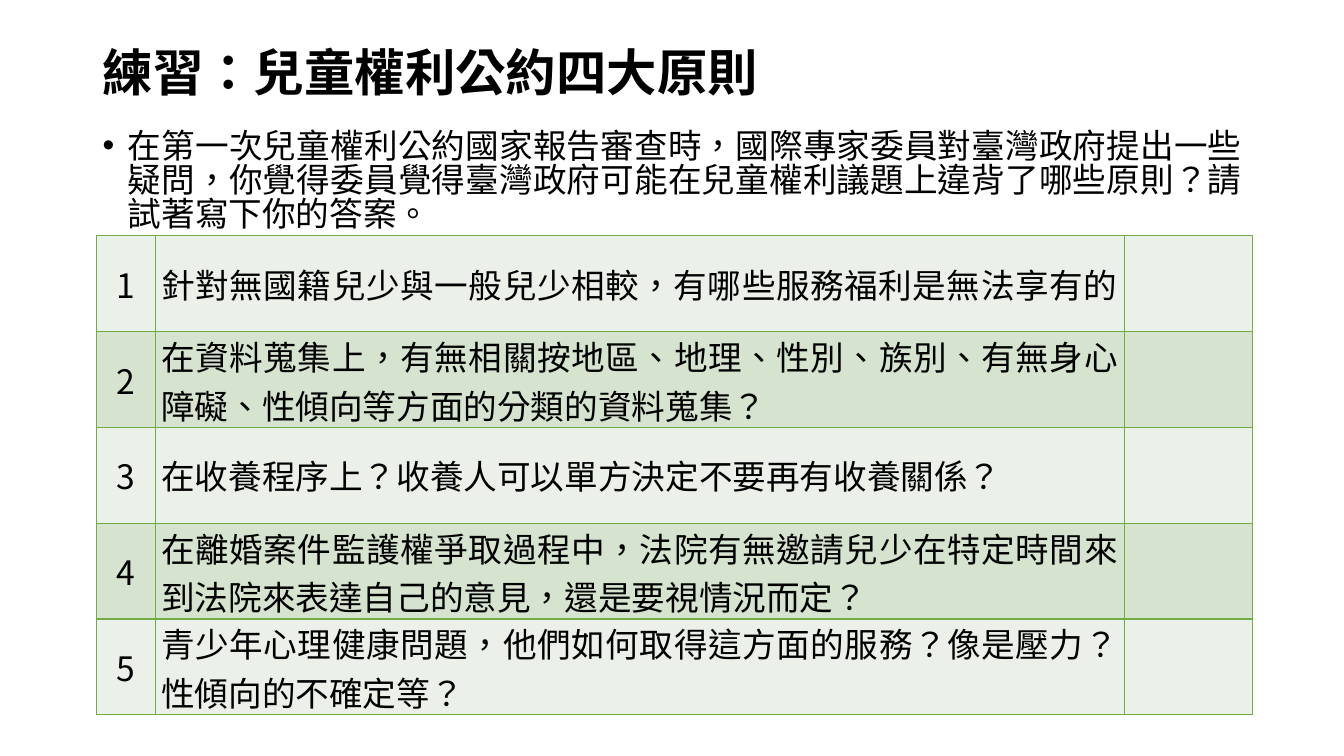
from lxml import etree
from pptx import Presentation
from pptx.dml.color import RGBColor
from pptx.enum import text
from pptx.oxml import ns
from pptx.util import Inches, Pt

FONT = "Noto Sans CJK SC"
COLORS = {"text": "000000", "border": "70AD47", "light": "EBF1E9", "dark": "D5E3CF"}
TITLE = "練習：兒童權利公約四大原則"
INTRODUCTION = (
    "在第一次兒童權利公約國家報告審查時，國際專家委員對臺灣政府提出一些疑問，"
    "你覺得委員覺得臺灣政府可能在兒童權利議題上違背了哪些原則？請試著寫下你的答案。"
)
QUESTIONS = [
    "針對無國籍兒少與一般兒少相較，有哪些服務福利是無法享有的？",
    "在資料蒐集上，有無相關按地區、地理、性別、族別、有無身心障礙、性傾向等方面的分類的資料蒐集？",
    "在收養程序上？收養人可以單方決定不要再有收養關係？",
    "在離婚案件監護權爭取過程中，法院有無邀請兒少在特定時間來到法院來表達自己的意見，還是要視情況而定？",
    "青少年心理健康問題，他們如何取得這方面的服務？像是壓力？性傾向的不確定等？",
]
COLUMN_WIDTHS = [0.58, 9.61, 1.27]
ROW_HEIGHT = 0.95


def add_run(paragraph, content, size, bold=False):
    run = paragraph.add_run()
    run.text = content
    run.font.name = FONT
    run.font.size = Pt(size)
    run.font.bold = bold
    run.font.color.rgb = RGBColor.from_string(COLORS["text"])
    properties = run._r.get_or_add_rPr()
    properties.set("lang", "zh-TW")
    east_asian = etree.SubElement(properties, ns.qn("a:ea"))
    east_asian.set("typeface", FONT)


def set_paragraph(paragraph, alignment):
    paragraph.alignment = alignment
    paragraph.space_before = paragraph.space_after = Pt(6)


def add_text_box(slide, left, top, width, height):
    box = slide.shapes.add_textbox(Inches(left), Inches(top), Inches(width), Inches(height))
    box.text_frame.word_wrap = True
    return box.text_frame


def add_title(slide):
    frame = add_text_box(slide, 0.92, 0.4, 11.5, 1.45)
    frame.margin_top = Inches(0.08)
    paragraph = frame.paragraphs[0]
    paragraph.line_spacing = 0.9
    add_run(paragraph, TITLE, 36, bold=True)


def add_introduction(slide):
    paragraph = add_text_box(slide, 0.92, 1.26, 11.5, 5.49).paragraphs[0]
    set_paragraph(paragraph, text.PP_ALIGN.JUSTIFY)
    paragraph.line_spacing = Pt(24)
    properties = paragraph._p.get_or_add_pPr()
    properties.set("marL", str(Inches(0.25)))
    properties.set("indent", str(Inches(-0.25)))
    etree.SubElement(properties, ns.qn("a:buFont")).set("typeface", "Arial")
    etree.SubElement(properties, ns.qn("a:buChar")).set("char", "•")
    add_run(paragraph, INTRODUCTION, 24)


def style_cell(cell, fill):
    properties = cell._tc.get_or_add_tcPr()
    for side in ("lnL", "lnR", "lnT", "lnB"):
        line = etree.SubElement(properties, ns.qn(f"a:{side}"), w=str(Pt(1)))
        solid = etree.SubElement(line, ns.qn("a:solidFill"))
        etree.SubElement(solid, ns.qn("a:srgbClr"), val=COLORS["border"])
    cell.fill.solid()
    cell.fill.fore_color.rgb = RGBColor.from_string(fill)


def fill_cell(cell, content, alignment):
    cell.vertical_anchor = text.MSO_ANCHOR.MIDDLE
    cell.margin_left = cell.margin_right = Inches(0.06)
    cell.margin_top = cell.margin_bottom = 0
    paragraph = cell.text_frame.paragraphs[0]
    set_paragraph(paragraph, alignment)
    add_run(paragraph, content, 24)


def add_question_table(slide):
    count = len(QUESTIONS)
    table = slide.shapes.add_table(
        count, len(COLUMN_WIDTHS), Inches(0.96), Inches(2.34),
        Inches(sum(COLUMN_WIDTHS)), Inches(ROW_HEIGHT * count),
    ).table
    table.first_row = False
    table.horz_banding = False
    for column, width in zip(table.columns, COLUMN_WIDTHS):
        column.width = Inches(width)
    for index, question in enumerate(QUESTIONS):
        row = table.rows[index]
        row.height = Inches(ROW_HEIGHT)
        for cell in row.cells:
            style_cell(cell, COLORS["dark" if index % 2 else "light"])
        fill_cell(row.cells[0], str(index + 1), text.PP_ALIGN.CENTER)
        fill_cell(row.cells[1], question, text.PP_ALIGN.JUSTIFY)


def main():
    presentation = Presentation()
    presentation.slide_width = Inches(13.33)
    presentation.slide_height = Inches(7.5)
    slide = presentation.slides.add_slide(presentation.slide_layouts[6])
    add_title(slide)
    add_introduction(slide)
    add_question_table(slide)
    presentation.save("out.pptx")


if __name__ == "__main__":
    main()
